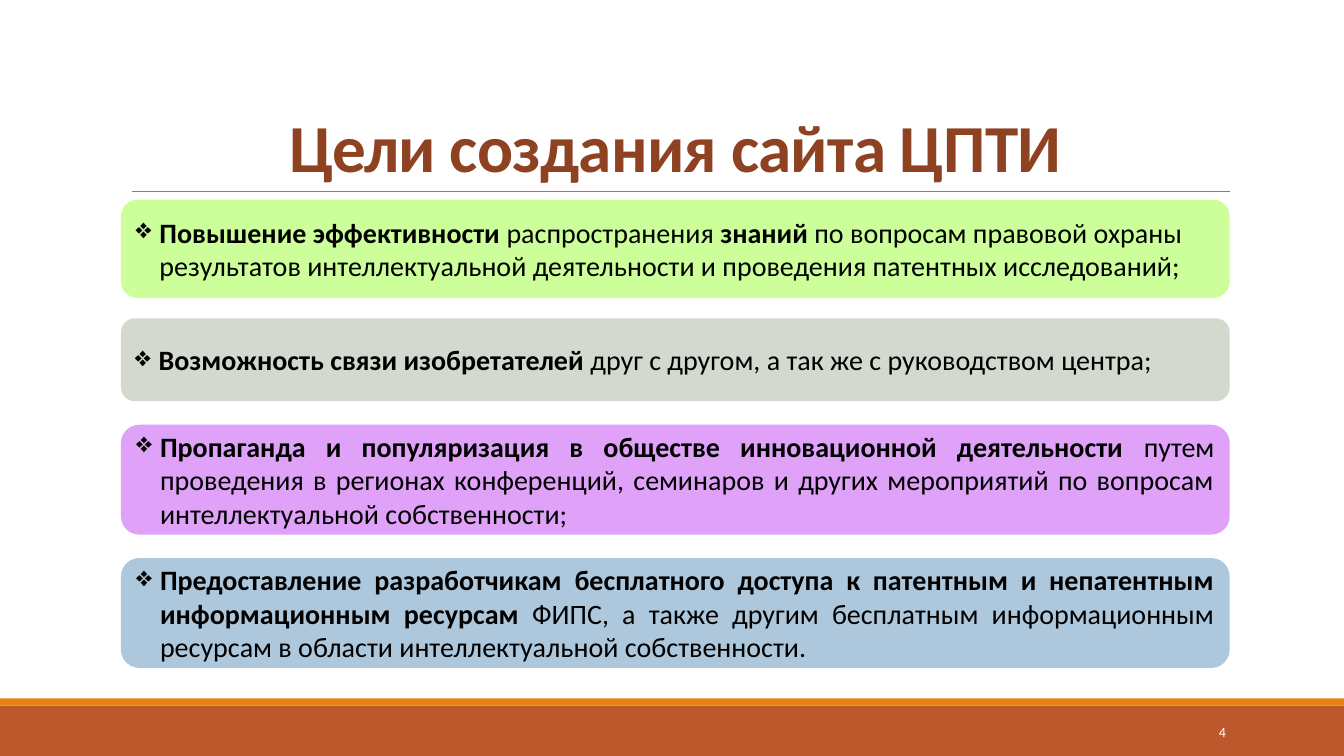
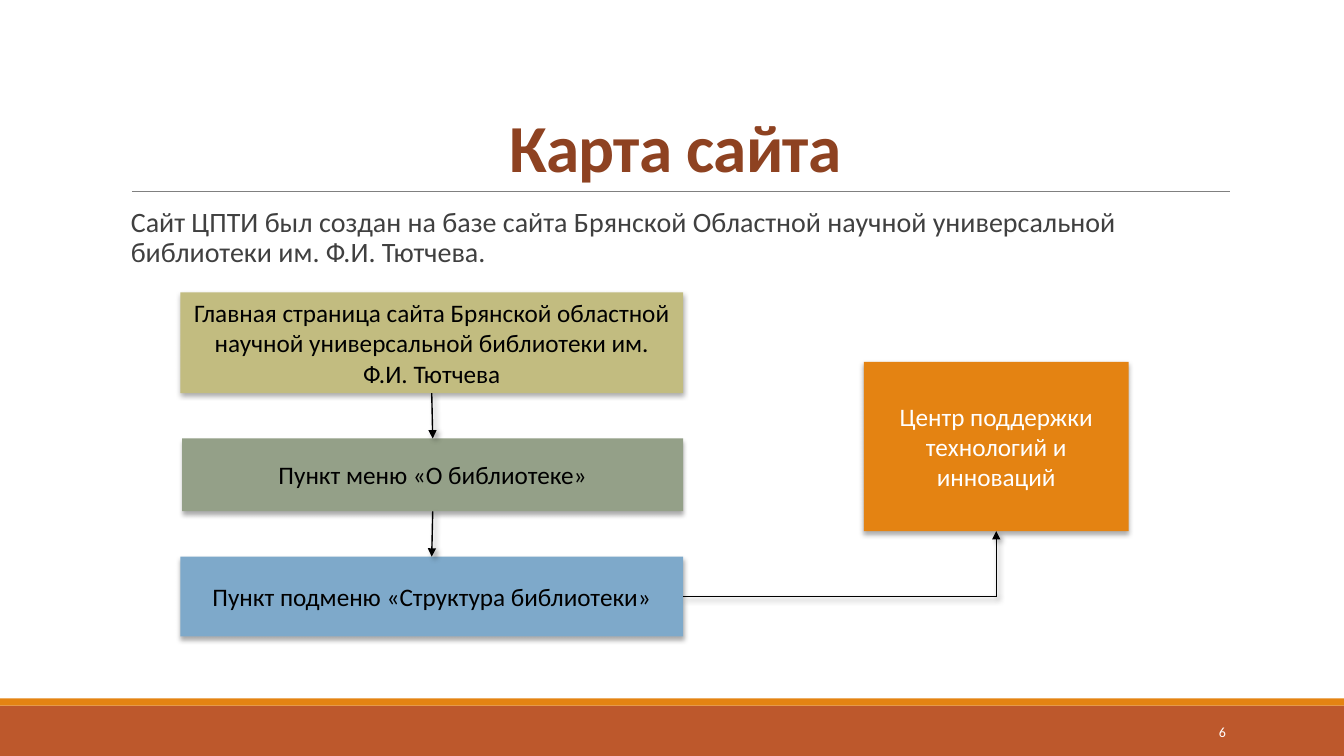
from dataclasses import dataclass

from lxml.etree import SubElement
from pptx import Presentation
from pptx.dml.color import RGBColor
from pptx.enum.shapes import MSO_CONNECTOR, MSO_SHAPE
from pptx.enum.text import MSO_ANCHOR, PP_ALIGN
from pptx.oxml.ns import qn
from pptx.util import Pt


@dataclass(frozen=True)
class Theme:
    font: str = "Calibri"
    title: str = "8E4221"
    body: str = "404040"
    black: str = "000000"
    white: str = "FFFFFF"
    rule: str = "808080"
    footer: str = "BD582C"
    accent: str = "E48312"
    lime: str = "CCFF99"
    grey: str = "D4D9CF"
    violet: str = "DFA2F8"
    pale_blue: str = "ADC8DD"
    khaki: str = "C2BC80"
    sage: str = "94A088"
    blue: str = "7EA9CA"
    title_size: int = 48
    text_size: int = 20
    box_size: int = 18
    number_size: int = 10


@dataclass(frozen=True)
class Shadow:
    """Opacity in percent, blur and distance in points, angle in degrees."""
    opacity: int
    blur: float
    distance: float
    angle: int


THEME = Theme()
BOX_SHADOW = Shadow(32, 3.5, 2.2, 90)
LINE_SHADOW = Shadow(40, 4, 3, 45)
WIDTH, HEIGHT = 960, 540
LEFT, CONTENT_WIDTH = 86.4, 792
BULLET_INDENT = 17
BOTTOM, TOP, RIGHT_SIDE = 2, 0, 3


def rgb(value):
    return RGBColor.from_string(value)


def set_effects(shape, shadow=None):
    """Replace the inherited effects by the given shadow, or by none."""
    props = shape._element.spPr
    for old in props.findall(qn("a:effectLst")):
        props.remove(old)
    effects = SubElement(props, qn("a:effectLst"))
    if shadow:
        outer = SubElement(effects, qn("a:outerShdw"), {
            "blurRad": str(Pt(shadow.blur)), "dist": str(Pt(shadow.distance)),
            "dir": str(shadow.angle * 60000), "rotWithShape": "0"})
        color = SubElement(outer, qn("a:srgbClr"), val=THEME.black)
        SubElement(color, qn("a:alpha"), val=str(shadow.opacity * 1000))


def add_run(p, text, size, color, bold=False):
    r = p.add_run()
    r.text = text
    r.font.name = THEME.font
    r.font.size = Pt(size)
    r.font.bold = bold
    r.font.color.rgb = rgb(color)
    return r


def add_text(slide, box, text, size, color, align=PP_ALIGN.LEFT,
             anchor=MSO_ANCHOR.TOP, bold=False, spacing=1.0):
    tf = slide.shapes.add_textbox(*map(Pt, box)).text_frame
    tf.word_wrap = True
    tf.vertical_anchor = anchor
    p = tf.paragraphs[0]
    p.alignment = align
    p.line_spacing = spacing
    return add_run(p, text, size, color, bold)


def add_box(slide, box, fill, kind=MSO_SHAPE.RECTANGLE, shadow=None):
    sp = slide.shapes.add_shape(kind, *map(Pt, box))
    sp.fill.solid()
    sp.fill.fore_color.rgb = rgb(fill)
    sp.line.fill.background()
    set_effects(sp, shadow)
    sp.text_frame.word_wrap = True
    sp.text_frame.vertical_anchor = MSO_ANCHOR.MIDDLE
    return sp


def add_line(slide, start, end, color, width):
    line = slide.shapes.add_connector(
        MSO_CONNECTOR.STRAIGHT, *map(Pt, (*start, *end)))
    line.line.color.rgb = rgb(color)
    line.line.width = Pt(width)
    set_effects(line)
    return line


def add_flow_line(slide, start=(0, 0), end=(0, 0), source=None, target=None,
                  arrow=True):
    """Draw a flow line; source and target are (shape, side) joints."""
    line = add_line(slide, start, end, THEME.black, 1)
    if source:
        line.begin_connect(*source)
    if target:
        line.end_connect(*target)
    if arrow:
        SubElement(line.line._get_or_add_ln(), qn("a:tailEnd"), type="triangle")
    set_effects(line, LINE_SHADOW)


def add_goal(slide, top, height, fill, align, runs):
    """Add a rounded panel with one bulleted paragraph; runs alternate from bold."""
    sp = add_box(slide, (LEFT, top, CONTENT_WIDTH, height), fill,
                 MSO_SHAPE.ROUNDED_RECTANGLE)
    p = sp.text_frame.paragraphs[0]
    p.alignment = align
    props = p._p.get_or_add_pPr()
    props.set("marL", str(Pt(BULLET_INDENT)))
    props.set("indent", str(-Pt(BULLET_INDENT)))
    SubElement(props, qn("a:buChar"), char="❖")
    for i, text in enumerate(runs):
        add_run(p, text, THEME.text_size, THEME.black, bold=i % 2 == 0)


def add_step(slide, box, fill, text, color=THEME.black):
    sp = add_box(slide, box, fill, shadow=BOX_SHADOW)
    p = sp.text_frame.paragraphs[0]
    p.alignment = PP_ALIGN.CENTER
    add_run(p, text, THEME.box_size, color)
    return sp


def add_base_slide(prs, title, number):
    slide = prs.slides.add_slide(prs.slide_layouts[6])
    add_box(slide, (0, 504, WIDTH, 36), THEME.footer)
    add_box(slide, (0, 498.9, WIDTH, 5.1), THEME.accent)
    add_line(slide, (94.3, 136.8), (878.4, 136.8), THEME.rule, 0.5)
    r = add_text(slide, (LEFT, 22.5, CONTENT_WIDTH, 114.3), title,
                 THEME.title_size, THEME.title, PP_ALIGN.CENTER,
                 MSO_ANCHOR.BOTTOM, bold=True, spacing=0.85)
    r.font._element.set("spc", "-50")
    add_text(slide, (779.8, 508.5, 103, 28.8), number, THEME.number_size,
             THEME.white, PP_ALIGN.RIGHT, MSO_ANCHOR.MIDDLE)
    return slide


def add_goals_slide(prs):
    slide = add_base_slide(prs, "Цели создания сайта ЦПТИ", "4")
    goals = [
        (142.7, 70, THEME.lime, PP_ALIGN.LEFT,
         ["Повышение эффективности ", "распространения ", "знаний ",
          "по вопросам правовой охраны результатов интеллектуальной "
          "деятельности и проведения патентных исследований;"]),
        (227.4, 59.2, THEME.grey, PP_ALIGN.LEFT,
         ["Возможность связи изобретателей",
          " друг с другом, а так же с руководством центра;"]),
        (303.4, 78.5, THEME.violet, PP_ALIGN.JUSTIFY,
         ["Пропаганда и популяризация в обществе инновационной деятельности ",
          "путем проведения в регионах конференций, семинаров и других "
          "мероприятий по вопросам интеллектуальной собственности;"]),
        (398.6, 78.5, THEME.pale_blue, PP_ALIGN.JUSTIFY,
         ["Предоставление разработчикам бесплатного доступа к патентным и "
          "непатентным информационным ресурсам ",
          "ФИПС, а также другим бесплатным информационным ресурсам в области "
          "интеллектуальной собственности."]),
    ]
    for goal in goals:
        add_goal(slide, *goal)


def add_site_map_slide(prs):
    slide = add_base_slide(prs, "Карта сайта", "6")
    add_text(slide, (LEFT, 145.4, CONTENT_WIDTH, 55),
             "Сайт ЦПТИ был создан на базе сайта Брянской Областной научной "
             "универсальной библиотеки им. Ф.И. Тютчева.",
             THEME.text_size, THEME.body, spacing=0.9)
    home = add_step(slide, (128.8, 208.8, 359.2, 72), THEME.khaki,
                    "Главная страница сайта Брянской областной научной "
                    "универсальной библиотеки им. Ф.И. Тютчева")
    menu = add_step(slide, (130.2, 313.2, 357.8, 52), THEME.sage,
                    "Пункт меню «О библиотеке»")
    submenu = add_step(slide, (128.8, 397.6, 359.2, 57), THEME.blue,
                       "Пункт подменю «Структура библиотеки»")
    center = add_step(slide, (617, 258.4, 189.2, 121), THEME.accent,
                      "Центр поддержки технологий и инноваций", THEME.white)
    for upper, lower in ((home, menu), (menu, submenu)):
        add_flow_line(slide, source=(upper, BOTTOM), target=(lower, TOP))
    corner = (711.6, 426.1)
    add_flow_line(slide, end=corner, source=(submenu, RIGHT_SIDE), arrow=False)
    add_flow_line(slide, start=corner, target=(center, BOTTOM))


def main():
    prs = Presentation()
    prs.slide_width, prs.slide_height = Pt(WIDTH), Pt(HEIGHT)
    add_goals_slide(prs)
    add_site_map_slide(prs)
    prs.save("out.pptx")


if __name__ == "__main__":
    main()
